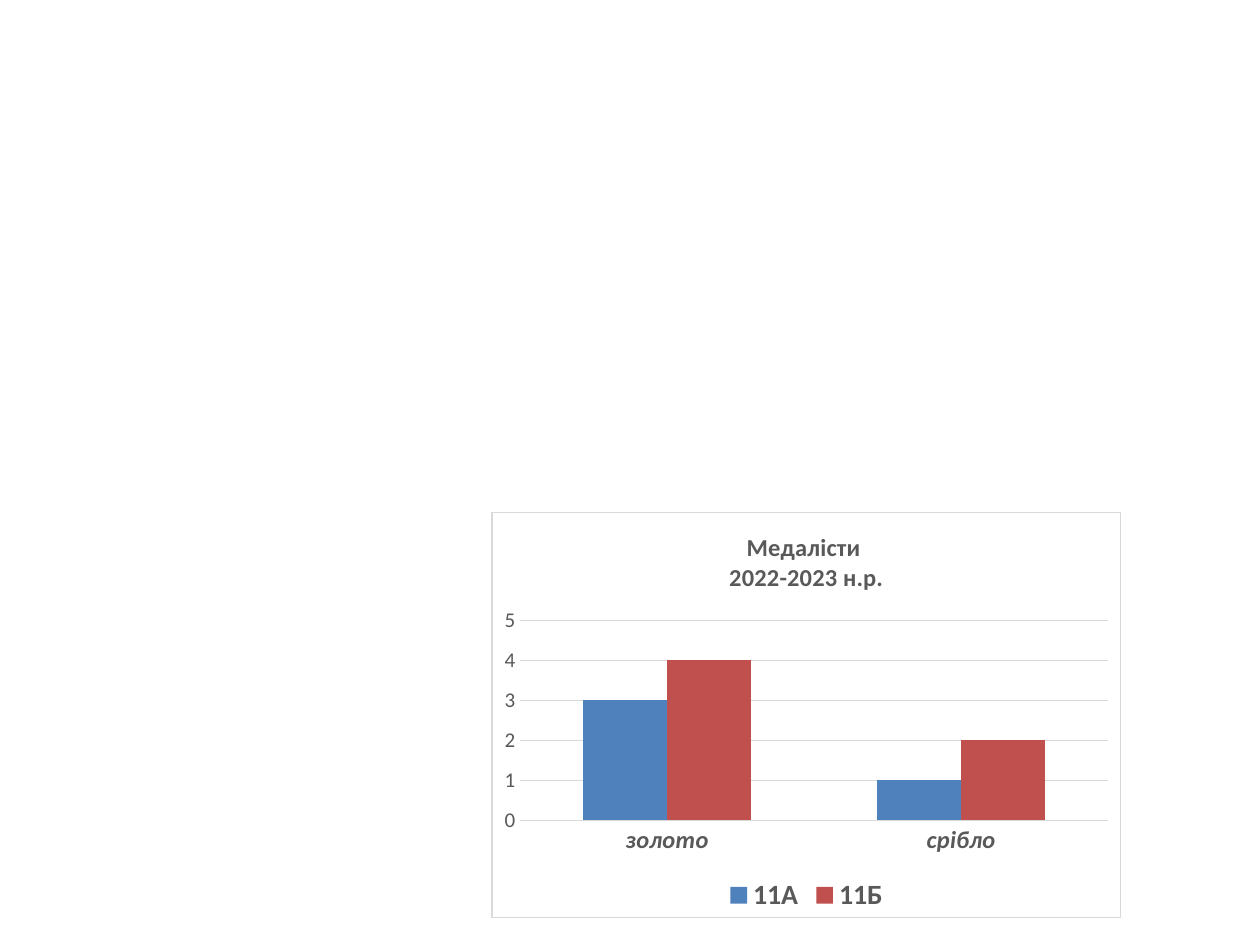
from pptx import Presentation
from pptx.chart.data import CategoryChartData
from pptx.dml.color import RGBColor
from pptx.enum.chart import XL_CHART_TYPE as ChartType
from pptx.enum.chart import XL_LEGEND_POSITION as LegendPos
from pptx.enum.chart import XL_TICK_MARK as Tick
from pptx.oxml import parse_xml
from pptx.oxml.ns import nsdecls
from pptx.util import Inches, Pt

WHITE = RGBColor(0xFF, 0xFF, 0xFF)
GREY = RGBColor(0xD9, 0xD9, 0xD9)
TEXT = RGBColor(0x59, 0x59, 0x59)
BLUE = RGBColor(0x4F, 0x81, 0xBD)
RED = RGBColor(0xC0, 0x50, 0x4D)

CLASSES = [("11А", (3, 1), BLUE), ("11Б", (4, 2), RED)]


def set_font(font, size, bold=False, italic=False, color=TEXT):
    """Format a chart font."""
    font.name, font.size = "Calibri", Pt(size)
    font.bold, font.italic = bold, italic
    font.color.rgb = color


def add_text(p, text, **fmt):
    """Add a formatted run to a paragraph."""
    r = p.add_run()
    r.text = text
    set_font(r.font, **fmt)


def set_line(line, color=GREY):
    """Give a line the thin chart stroke."""
    line.color.rgb = color
    line.width = Pt(0.75)


def frame_chart(chart, fill, border):
    """Fill and outline the chart area."""
    sp_pr = parse_xml(
        f'<c:spPr {nsdecls("c", "a")}>'
        f'<a:solidFill><a:srgbClr val="{fill}"/></a:solidFill>'
        f'<a:ln w="{Pt(0.75)}"><a:solidFill><a:srgbClr val="{border}"/></a:solidFill></a:ln>'
        '</c:spPr>')
    chart._chartSpace.chart.addnext(sp_pr)


def format_axes(chart):
    """Style both axes and the gridlines."""
    cat, val = chart.category_axis, chart.value_axis
    for axis in (cat, val):
        axis.major_tick_mark = axis.minor_tick_mark = Tick.NONE
    set_font(cat.tick_labels.font, 14, bold=True, italic=True)
    set_line(cat.format.line)
    set_font(val.tick_labels.font, 12)
    val.format.line.fill.background()
    val.minimum_scale, val.maximum_scale, val.major_unit = 0, 5, 1
    set_line(val.major_gridlines.format.line)


def add_medal_chart(s, left, top, width, height):
    """Place the medallists column chart in the given box."""
    data = CategoryChartData()
    data.categories = ["золото", "срібло"]
    for name, values, _ in CLASSES:
        data.add_series(name, values)
    chart = s.shapes.add_chart(
        ChartType.COLUMN_CLUSTERED, left, top, width, height, data).chart
    set_font(chart.font, 10)
    frame_chart(chart, WHITE, GREY)

    tf = chart.chart_title.text_frame
    add_text(tf.paragraphs[0], "Медалісти ", size=14, bold=True)
    add_text(tf.add_paragraph(), "2022-2023 н.р.", size=14, bold=True)
    chart.chart_title.include_in_layout = False

    plot = chart.plots[0]
    plot.gap_width, plot.overlap, plot.vary_by_categories = 150, 0, False
    for series, (_, _, color) in zip(plot.series, CLASSES):
        series.format.fill.solid()
        series.format.fill.fore_color.rgb = color

    format_axes(chart)
    chart.has_legend = True
    chart.legend.position = LegendPos.BOTTOM
    chart.legend.include_in_layout = False
    set_font(chart.legend.font, 16, bold=True)


def main():
    """Build the slide and save it."""
    prs = Presentation()
    prs.slide_width, prs.slide_height = Inches(10), Inches(7.5)
    s = prs.slides.add_slide(prs.slide_layouts[6])
    add_medal_chart(s, Inches(3.9), Inches(4.06), Inches(5), Inches(3.23))
    prs.save("out.pptx")


if __name__ == "__main__":
    main()
